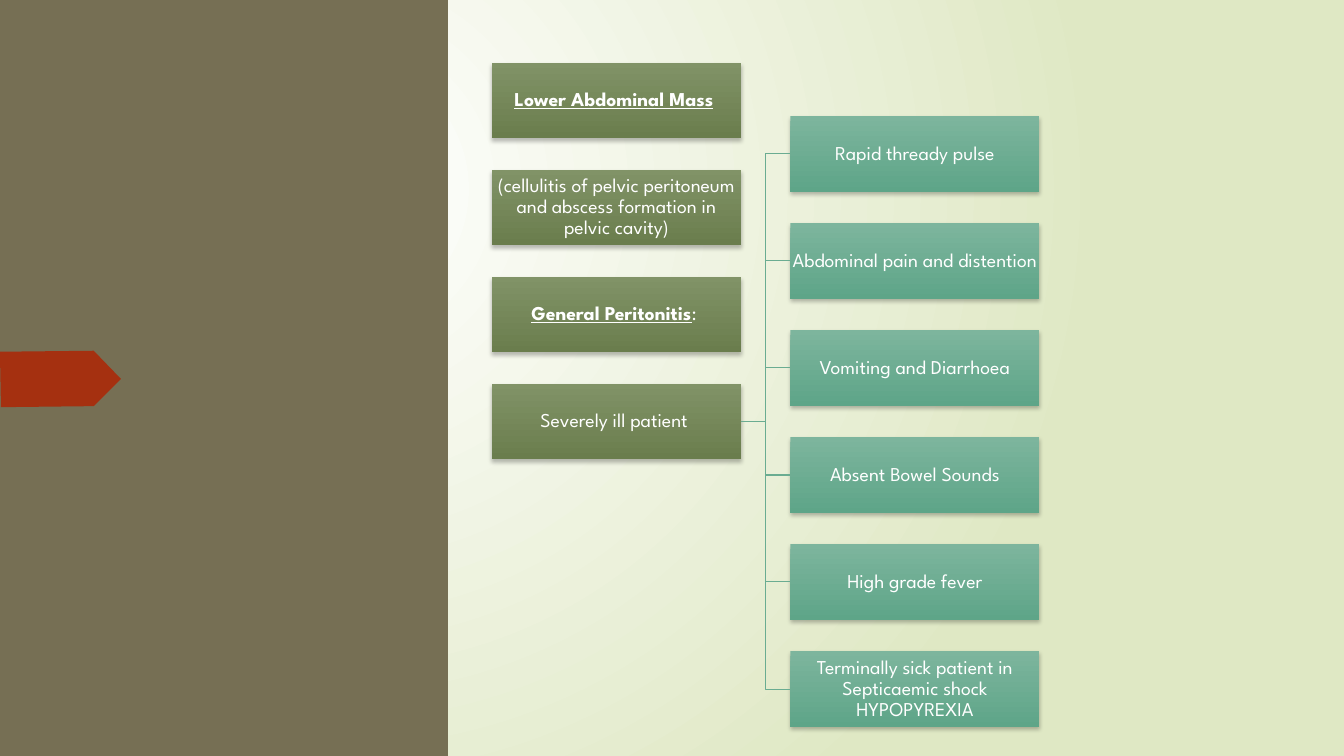
import dataclasses
import pptx
import pptx.dml.color
import pptx.enum.shapes
import pptx.enum.text
import pptx.oxml
import pptx.oxml.ns
import pptx.shapes.autoshape
import pptx.slide
import pptx.util

WIDE, HIGH = 13.33, 7.5
LEFT, TOP = 4.88, 0.62
STEP, PITCH = 2.96, 5.31 / 5
BOX_W, BOX_H = 2.47, 0.75
OLIVE, RED, TEAL = "766F54", "A53010", "6AAC91"
BACK = ("FFFFFF", "DFE8C4")
SHADES = (("819367", "6A7D4D"), ("7DB59D", "5EA588"))
SPACE = 'xmlns:a="http://schemas.openxmlformats.org/drawingml/2006/main"'
CIRCLE = (f'<a:path {SPACE} path="circle">'
          '<a:fillToRect l="50000" t="50000" r="100000" b="100000"/></a:path>')
SHADOW = (f'<a:effectLst {SPACE}><a:outerShdw blurRad="38100" dist="25400" dir="5400000" '
          'algn="ctr" rotWithShape="0"><a:srgbClr val="000000"><a:alpha val="25000"/>'
          '</a:srgbClr></a:outerShdw></a:effectLst>')
FRAME = {
    "word_wrap": True,
    "vertical_anchor": pptx.enum.text.MSO_ANCHOR.MIDDLE,
    **{f"margin_{side}": pptx.util.Inches(0.01) for side in ("left", "top", "right", "bottom")},
}
LINES = {"alignment": pptx.enum.text.PP_ALIGN.CENTER, "line_spacing": 0.9}
FONT = {"name": "League Spartan", "size": pptx.util.Pt(14)}


@dataclasses.dataclass(frozen=True)
class Box:
    col: int
    row: float
    text: str
    head: str = ""


CAUSES = [
    Box(0, 0, " ", "Lower Abdominal Mass"),
    Box(0, 1, "(cellulitis of pelvic peritoneum and abscess formation in pelvic cavity)"),
    Box(0, 2, ": ", "General Peritonitis"),
    Box(0, 3, "Severely ill patient "),
]
SIGNS = [
    Box(1, row + 0.5, text)
    for row, text in enumerate((
        "Rapid thready pulse",
        "Abdominal pain and distention",
        "Vomiting and Diarrhoea",
        "Absent Bowel Sounds",
        "High grade fever",
        "Terminally sick patient in Septicaemic shock HYPOPYREXIA",
    ))
]


def tint(code: str) -> pptx.dml.color.RGBColor:
    return pptx.dml.color.RGBColor.from_string(code)


def style(item: object, values: dict) -> None:
    for key, value in values.items():
        setattr(item, key, value)


def blend(fill: pptx.dml.fill.FillFormat, codes: tuple[str, str]) -> None:
    fill.gradient()
    for stop, code in zip(fill.gradient_stops, codes):
        stop.color.rgb = tint(code)


def paint(shape: pptx.shapes.autoshape.Shape, code: str) -> None:
    shape.fill.solid()
    shape.fill.fore_color.rgb = tint(code)
    shape.line.fill.background()
    shape.shadow.inherit = False


def block(slide: pptx.slide.Slide, left: float, top: float,
          width: float, height: float) -> pptx.shapes.autoshape.Shape:
    return slide.shapes.add_shape(
        pptx.enum.shapes.MSO_SHAPE.RECTANGLE,
        *map(pptx.util.Inches, (left, top, width, height)))


def add_back(slide: pptx.slide.Slide) -> None:
    blend(slide.background.fill, BACK)
    lin = slide.element.find(".//" + pptx.oxml.ns.qn("a:lin"))
    lin.getparent().replace(lin, pptx.oxml.parse_xml(CIRCLE))


def add_panels(slide: pptx.slide.Slide) -> None:
    paint(block(slide, 0, 0, WIDE / 3, HIGH), OLIVE)
    pen = slide.shapes.build_freeform(0, pptx.util.Inches(3.49), scale=1.0)
    points = ((0.93, 3.48), (1.2, 3.76), (0.93, 4.03), (0.01, 4.04))
    pen.add_line_segments([tuple(map(pptx.util.Inches, point)) for point in points], close=True)
    paint(pen.convert_to_shape(), RED)


def add_box(slide: pptx.slide.Slide, box: Box) -> pptx.shapes.autoshape.Shape:
    shape = block(slide, LEFT + box.col * STEP, TOP + box.row * PITCH, BOX_W, BOX_H)
    blend(shape.fill, SHADES[box.col])
    shape.fill.gradient_angle = 270
    shape.line.fill.background()
    shape.element.spPr.append(pptx.oxml.parse_xml(SHADOW))
    style(shape.text_frame, FRAME)
    line = shape.text_frame.paragraphs[0]
    style(line, LINES)
    for text, strong in ((box.head, True), (box.text, False)):
        if text:
            run = line.add_run()
            run.text = text
            style(run.font, FONT | {"bold": strong, "underline": strong})
            run.font.color.rgb = tint("FFFFFF")
    return shape


def join(slide: pptx.slide.Slide, start: pptx.shapes.autoshape.Shape,
         end: pptx.shapes.autoshape.Shape) -> None:
    link = slide.shapes.add_connector(pptx.enum.shapes.MSO_CONNECTOR.ELBOW, 0, 0, 0, 0)
    link.begin_connect(start, 3)
    link.end_connect(end, 1)
    link.line.color.rgb = tint(TEAL)
    link.line.width = pptx.util.Pt(0.75)
    link.element.spPr.append(pptx.oxml.parse_xml(f"<a:effectLst {SPACE}/>"))


def main() -> None:
    deck = pptx.Presentation()
    style(deck, {"slide_width": pptx.util.Inches(WIDE), "slide_height": pptx.util.Inches(HIGH)})
    slide = deck.slides.add_slide(deck.slide_layouts[6])
    add_back(slide)
    add_panels(slide)
    causes = [add_box(slide, box) for box in CAUSES]
    for sign in SIGNS:
        join(slide, causes[-1], add_box(slide, sign))
    deck.save("out.pptx")


if __name__ == "__main__":
    main()
